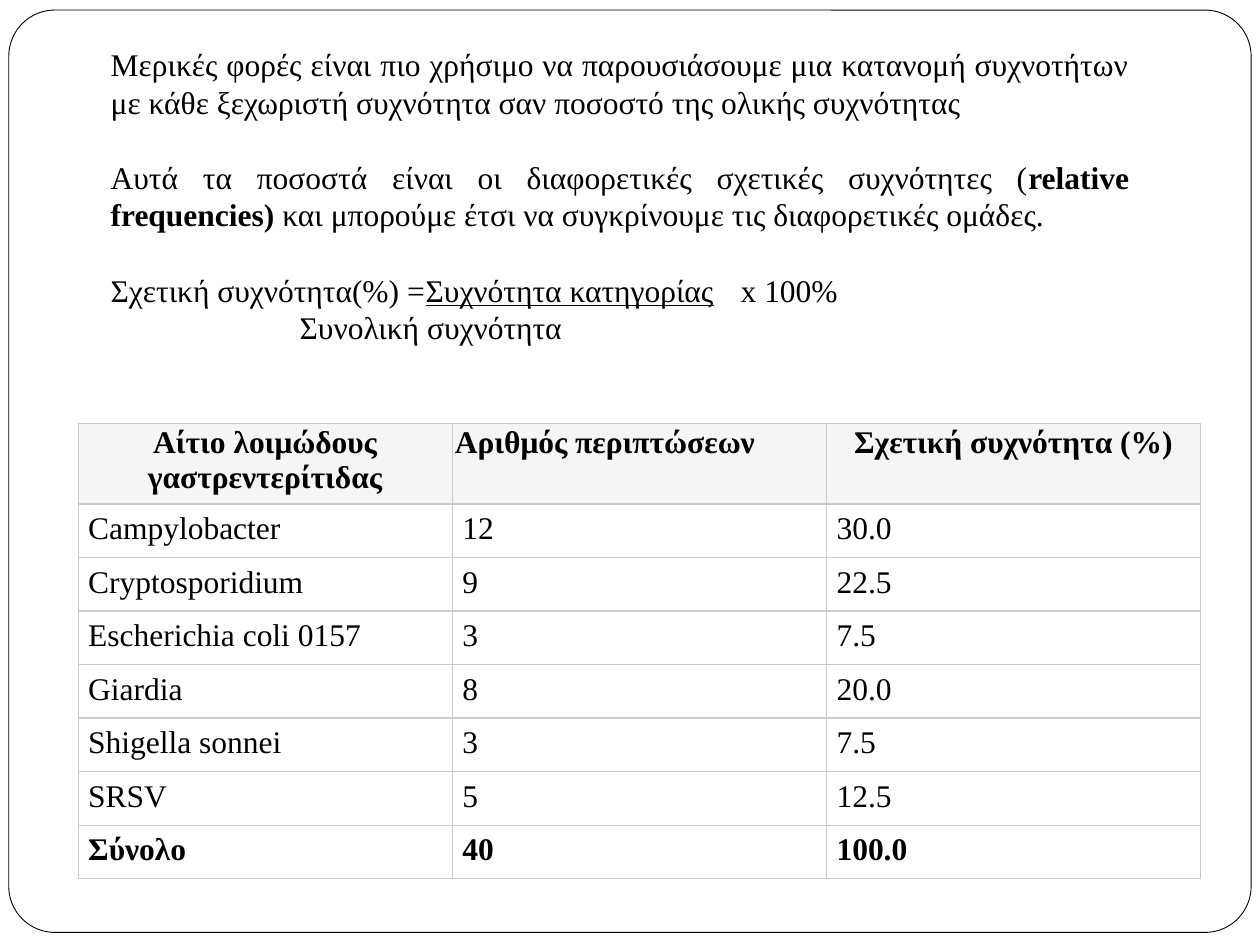
from typing import NamedTuple

from lxml import etree
from pptx import Presentation
from pptx.dml.color import RGBColor
from pptx.enum.shapes import MSO_SHAPE
from pptx.enum.text import PP_ALIGN
from pptx.oxml.ns import qn
from pptx.util import Inches, Pt

ROUNDED = MSO_SHAPE.ROUNDED_RECTANGLE
LEFT, CENTER, JUSTIFY = PP_ALIGN.LEFT, PP_ALIGN.CENTER, PP_ALIGN.JUSTIFY
FONT = "Times New Roman"
BLACK, WHITE, HEADER_GRAY, BORDER_GRAY = "000000", "FFFFFF", "F5F5F5", "CCCCCC"
LINE_PITCH = Pt(21.5)


class Run(NamedTuple):
    text: str
    bold: bool = False
    underline: bool = False


class Passage(NamedTuple):
    runs: list[Run]
    align: PP_ALIGN = JUSTIFY
    gap_before: bool = True


class Heading(NamedTuple):
    text: str
    align: PP_ALIGN


PASSAGES = [
    Passage([Run("Μερικές φορές είναι πιο χρήσιμο να παρουσιάσουμε μια κατανομή συχνοτήτων "
                 "με κάθε ξεχωριστή συχνότητα σαν ποσοστό της ολικής συχνότητας")],
            gap_before=False),
    Passage([Run("Αυτά τα ποσοστά είναι οι διαφορετικές σχετικές συχνότητες ("),
             Run("relative frequencies) ", bold=True),
             Run("και μπορούμε έτσι να συγκρίνουμε τις διαφορετικές ομάδες.")]),
    Passage([Run("Σχετική συχνότητα(%) =\t"),
             Run("Συχνότητα κατηγορίας", underline=True),
             Run(" \tx 100%")]),
    Passage([Run("\t\t\tΣυνολική συχνότητα")], align=LEFT, gap_before=False),
]
HEADINGS = [
    Heading("Αίτιο λοιμώδους γαστρεντερίτιδας", CENTER),
    Heading("Αριθμός περιπτώσεων", LEFT),
    Heading("Σχετική συχνότητα (%)", CENTER),
]
CASES = [
    ("Campylobacter", "12", "30.0"),
    ("Cryptosporidium", "9", "22.5"),
    ("Escherichia coli 0157", "3", "7.5"),
    ("Giardia", "8", "20.0"),
    ("Shigella sonnei", "3", "7.5"),
    ("SRSV", "5", "12.5"),
    ("Σύνολο", "40", "100.0"),
]


def color(value: str) -> RGBColor:
    return RGBColor.from_string(value)


def add_text(paragraph, text: str, *, bold=False, underline=False, align=LEFT) -> None:
    paragraph.alignment = align
    run = paragraph.add_run()
    run.text = text
    run.font.name = FONT
    run.font.size = Pt(18)
    run.font.bold = bold
    run.font.underline = underline
    run.font.color.rgb = color(BLACK)


def add_border(cell) -> None:
    properties = cell._tc.get_or_add_tcPr()
    for position, side in enumerate(("lnL", "lnR", "lnT", "lnB")):
        line = etree.Element(qn(f"a:{side}"), w=str(Pt(0.75)))
        fill = etree.SubElement(line, qn("a:solidFill"))
        etree.SubElement(fill, qn("a:srgbClr"), val=BORDER_GRAY)
        properties.insert(position, line)


def fill_cell(cell, text: str, *, background=WHITE, inset_x=0.08, inset_y=0.06,
              bold=False, align=LEFT) -> None:
    cell.margin_left = cell.margin_right = Inches(inset_x)
    cell.margin_top = cell.margin_bottom = Inches(inset_y)
    cell.fill.solid()
    cell.fill.fore_color.rgb = color(background)
    add_border(cell)
    add_text(cell.text_frame.paragraphs[0], text, bold=bold, align=align)


def add_frame(slide) -> None:
    frame = slide.shapes.add_shape(ROUNDED, Inches(0.07), Inches(0.08),
                                   Inches(9.86), Inches(7.32))
    frame.adjustments[0] = 0.05
    frame.shadow.inherit = False
    frame.fill.solid()
    frame.fill.fore_color.rgb = color(WHITE)
    frame.line.color.rgb = color(BLACK)
    frame.line.width = Pt(0.5)


def add_explanation(slide) -> None:
    explanation = slide.shapes.add_textbox(Inches(0.78), Inches(0.31),
                                           Inches(8.28), Inches(3.13)).text_frame
    explanation.word_wrap = True
    for index, passage in enumerate(PASSAGES):
        paragraph = explanation.add_paragraph() if index else explanation.paragraphs[0]
        paragraph.line_spacing = LINE_PITCH
        paragraph.space_before = LINE_PITCH if passage.gap_before else Pt(0)
        for run in passage.runs:
            add_text(paragraph, run.text, bold=run.bold, underline=run.underline,
                     align=passage.align)


def add_frequencies(slide) -> None:
    frequencies = slide.shapes.add_table(len(CASES) + 1, len(HEADINGS), Inches(0.62),
                                         Inches(3.36), Inches(8.91), Inches(3.62)).table
    for index, row in enumerate(frequencies.rows):
        row.height = Inches(0.425 if index else 0.64)
    for column, heading in enumerate(HEADINGS):
        fill_cell(frequencies.cell(0, column), heading.text, background=HEADER_GRAY,
                  inset_x=0.02, inset_y=0.02, bold=True, align=heading.align)
    for row, case in enumerate(CASES, start=1):
        for column, value in enumerate(case):
            fill_cell(frequencies.cell(row, column), value, bold=row == len(CASES))


def main() -> None:
    deck = Presentation()
    deck.slide_width, deck.slide_height = Inches(10), Inches(7.5)
    slide = deck.slides.add_slide(deck.slide_layouts[6])

    # Rounded page frame
    add_frame(slide)
    # Explanation and formula
    add_explanation(slide)
    # Frequency table
    add_frequencies(slide)

    deck.save("out.pptx")


if __name__ == "__main__":
    main()
